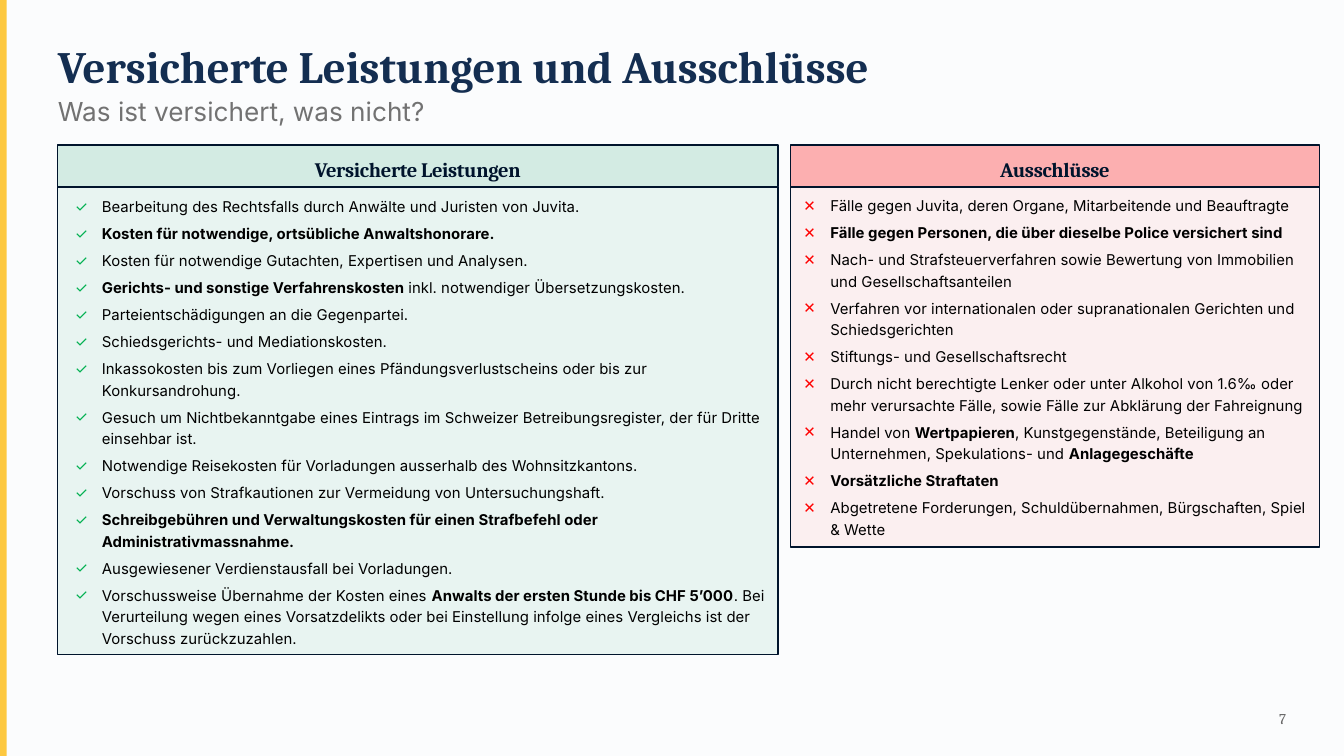
from dataclasses import dataclass

from lxml import etree
from pptx import Presentation
from pptx.dml.color import RGBColor
from pptx.enum.shapes import MSO_SHAPE
from pptx.enum.text import MSO_ANCHOR, PP_ALIGN
from pptx.oxml.ns import qn
from pptx.util import Inches, Pt

RECTANGLE = MSO_SHAPE.RECTANGLE
ROUNDED = MSO_SHAPE.ROUNDED_RECTANGLE
TOP, MIDDLE = MSO_ANCHOR.TOP, MSO_ANCHOR.MIDDLE
LEFT, CENTER, RIGHT = PP_ALIGN.LEFT, PP_ALIGN.CENTER, PP_ALIGN.RIGHT

PAGE_WIDTH = 10
PAGE_HEIGHT = PAGE_WIDTH * 9 / 16


@dataclass(frozen=True)
class Theme:
    background: str = "FBFCFD"
    accent: str = "FDC840"
    title: str = "142E51"
    subtitle: str = "727272"
    number: str = "646464"
    ink: str = "00142C"
    body: str = "000000"
    green: str = "00B050"
    green_header: str = "CAE7DD"
    green_body: str = "E8F4F1"
    red: str = "FF0000"
    serif: str = "Cambria"
    sans: str = "Inter"
    title_size: int = 24
    subtitle_size: int = 14
    header_size: int = 11
    body_size: int = 8


THEME = Theme()

COVERED = [
    "Bearbeitung des Rechtsfalls durch Anwälte und Juristen von Juvita.",
    "**Kosten für notwendige, ortsübliche Anwaltshonorare.**",
    "Kosten für notwendige Gutachten, Expertisen und Analysen.",
    "**Gerichts- und sonstige Verfahrenskosten **inkl. notwendiger Übersetzungskosten.",
    "Parteientschädigungen an die Gegenpartei.",
    "Schiedsgerichts- und Mediationskosten.",
    "Inkassokosten bis zum Vorliegen eines Pfändungsverlustscheins oder bis zur Konkursandrohung.",
    "Gesuch um Nichtbekanntgabe eines Eintrags im Schweizer Betreibungsregister, "
    "der für Dritte einsehbar ist.",
    "Notwendige Reisekosten für Vorladungen ausserhalb des Wohnsitzkantons.",
    "Vorschuss von Strafkautionen zur Vermeidung von Untersuchungshaft.",
    "**Schreibgebühren und Verwaltungskosten für einen Strafbefehl oder Administrativmassnahme.**",
    "Ausgewiesener Verdienstausfall bei Vorladungen.",
    "Vorschussweise Übernahme der Kosten eines **Anwalts der ersten Stunde bis CHF 5’000**. "
    "Bei Verurteilung wegen eines Vorsatzdelikts oder bei Einstellung infolge eines Vergleichs "
    "ist der Vorschuss zurückzuzahlen.",
]

EXCLUDED = [
    "Fälle gegen Juvita, deren Organe, Mitarbeitende und Beauftragte",
    "**Fälle gegen Personen, die über dieselbe Police versichert sind**",
    "Nach- und Strafsteuerverfahren sowie Bewertung von Immobilien und Gesellschaftsanteilen",
    "Verfahren vor internationalen oder supranationalen Gerichten und Schiedsgerichten",
    "Stiftungs- und Gesellschaftsrecht",
    "Durch nicht berechtigte Lenker oder unter Alkohol von 1.6‰ oder mehr verursachte Fälle, "
    "sowie Fälle zur Abklärung der Fahreignung",
    "Handel von **Wertpapieren**, Kunstgegenstände, Beteiligung an Unternehmen, "
    "Spekulations- und **Anlagegeschäfte**",
    "**Vorsätzliche Straftaten**",
    "Abgetretene Forderungen, Schuldübernahmen, Bürgschaften, Spiel & Wette",
]


def add_bullet(para, mark, color):
    props = para._p.get_or_add_pPr()
    props.set("marL", str(Inches(0.2)))
    props.set("indent", str(-Inches(0.2)))
    bullet_color = etree.SubElement(props, qn("a:buClr"))
    etree.SubElement(bullet_color, qn("a:srgbClr"), val=color)
    etree.SubElement(props, qn("a:buFont"), typeface=THEME.sans)
    etree.SubElement(props, qn("a:buChar"), char=mark)
    tabs = etree.SubElement(props, qn("a:tabLst"))
    etree.SubElement(tabs, qn("a:tab"), pos=str(Inches(0.1)), algn="l")


def write_text(frame, text, *, size, color, font, bold=False, align=LEFT, anchor=MIDDLE,
               margins=(0, 0), line_spacing=None, after=None, tracking=None, bullet=None):
    frame.word_wrap = True
    frame.vertical_anchor = anchor
    frame.margin_left = frame.margin_right = Inches(margins[0])
    frame.margin_top = frame.margin_bottom = Inches(margins[1])
    for index, line in enumerate([text] if isinstance(text, str) else text):
        para = frame.add_paragraph() if index else frame.paragraphs[0]
        if bullet:
            add_bullet(para, *bullet)
        para.alignment = align
        if line_spacing:
            para.line_spacing = line_spacing
        if after:
            para.space_after = Pt(after)
        for part, content in enumerate(line.split("**")):
            if not content:
                continue
            span = para.add_run()
            span.text = content
            span.font.size = Pt(size)
            span.font.name = font
            span.font.bold = bold or part % 2 == 1
            span.font.color.rgb = RGBColor.from_string(color)
            if tracking:
                span._r.get_or_add_rPr().set("spc", str(tracking))


def add_text(page, box, text, **style):
    label = page.shapes.add_textbox(*map(Inches, box))
    write_text(label.text_frame, text, **style)


def add_block(page, box, kind, color, opacity=100, outline=None):
    block = page.shapes.add_shape(kind, *map(Inches, box))
    block.shadow.inherit = False
    block.fill.solid()
    block.fill.fore_color.rgb = RGBColor.from_string(color)
    if kind == ROUNDED:
        block.adjustments[0] = 0
    if opacity < 100:
        fill_color = block.element.spPr.find(f"{qn('a:solidFill')}/{qn('a:srgbClr')}")
        etree.SubElement(fill_color, qn("a:alpha"), val=str(opacity * 1000))
    if outline:
        block.line.color.rgb = RGBColor.from_string(outline)
        block.line.width = Pt(0.75)
    else:
        block.line.fill.background()
    return block


def add_frame(page, box):
    left, top, width, height = box
    page.background.fill.solid()
    page.background.fill.fore_color.rgb = RGBColor.from_string(THEME.background)
    add_block(page, (left, top, 0.05, height), RECTANGLE, THEME.accent)
    add_text(page, (left + width - 1.3, top + 5.2, 0.87, 0.3), "7",
             size=THEME.body_size, color=THEME.number, font=THEME.serif, align=RIGHT)


def add_heading(page, box, title, subtitle):
    left, top, width, height = box
    banner = add_block(page, (left, top, 7.01, 0.46), RECTANGLE, THEME.background)
    write_text(banner.text_frame, title, size=THEME.title_size,
               color=THEME.title, font=THEME.serif, bold=True)
    add_text(page, (left, top + height - 0.19, width, 0.19), subtitle,
             size=THEME.subtitle_size, color=THEME.subtitle, font=THEME.sans)


def add_panel(page, box, title, items, *, bullet, header_fill, body_fill, anchor, shift=0):
    left, top, width, height = box
    header_height = 0.31
    body_top, body_height = top + header_height, height - header_height
    add_block(page, (left, body_top, width, body_height), ROUNDED, *body_fill, outline=THEME.ink)
    add_text(page, (left + shift, body_top, width, body_height), items,
             size=THEME.body_size, color=THEME.body, font=THEME.sans, anchor=anchor,
             margins=(0.1, 0.05), line_spacing=1.2, after=3, bullet=bullet)
    header = add_block(page, (left, top, width, header_height), ROUNDED, *header_fill,
                       outline=THEME.ink)
    write_text(header.text_frame, title, size=THEME.header_size, color=THEME.ink,
               font=THEME.serif, bold=True, align=CENTER, margins=(0.1, 0.05),
               line_spacing=1.3, after=4, tracking=-20)


def main():
    deck = Presentation()
    deck.slide_width, deck.slide_height = Inches(PAGE_WIDTH), Inches(PAGE_HEIGHT)
    page = deck.slides.add_slide(deck.slide_layouts[6])
    add_frame(page, (0, 0, PAGE_WIDTH, PAGE_HEIGHT))
    add_heading(page, (0.43, 0.26, 7.88, 0.66),
                "Versicherte Leistungen und Ausschlüsse", "Was ist versichert, was nicht?")
    add_panel(page, (0.43, 1.08, 5.36, 3.79), "Versicherte Leistungen", COVERED,
              bullet=("✓", THEME.green), header_fill=(THEME.green_header, 80),
              body_fill=(THEME.green_body,), anchor=MIDDLE, shift=0.03)
    add_panel(page, (5.88, 1.08, 3.94, 2.99), "Ausschlüsse", EXCLUDED,
              bullet=("✕", THEME.red), header_fill=(THEME.red, 30),
              body_fill=(THEME.red, 5), anchor=TOP)
    deck.save("out.pptx")


if __name__ == "__main__":
    main()
